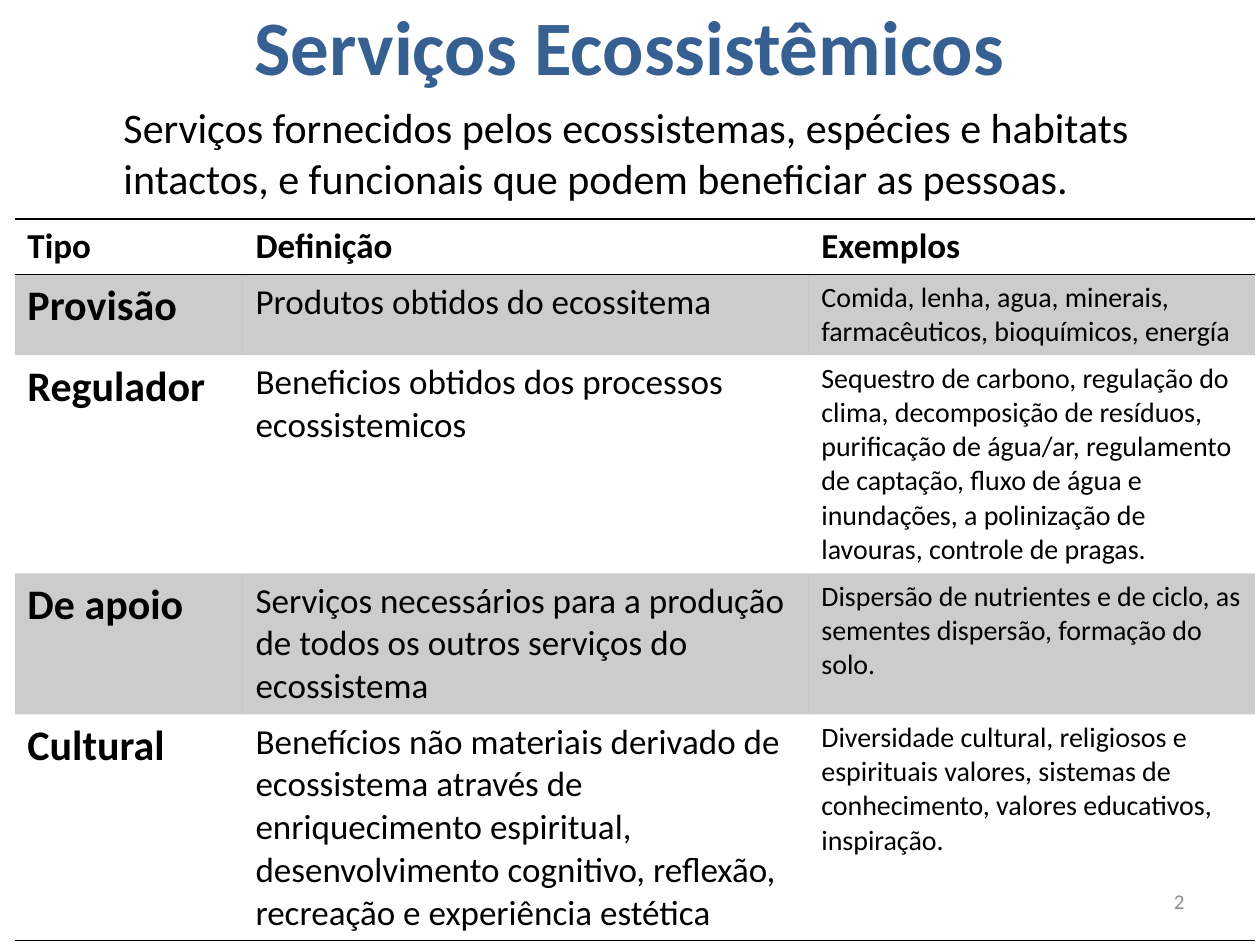
import pptx
import pptx.dml.color
import pptx.enum.text
import pptx.oxml
import pptx.oxml.ns
import pptx.util
from pptx.util import Cm

FONT = "Calibri"
COLORS = {"title": "376092", "text": "000000", "number": "8C8C8C", "band": "000000", "rule": "000000"}
BAND_OPACITY = 20
PLAIN_TABLE_STYLE = "{2D5ABB26-0587-4C30-8999-92F81FD0307C}"
ALIGN = pptx.enum.text.PP_ALIGN
ANCHOR = pptx.enum.text.MSO_ANCHOR

COLUMN_SHARES = [1.81, 4.49, 3.54]
ROW_HEIGHTS = [1.12, 1.63, 4.4, 2.84, 4.56]
HEADER = ["Tipo", "Definição", "Exemplos"]
SERVICES = [
    ["Provisão", "Produtos obtidos do ecossitema",
     "Comida, lenha, agua, minerais, farmacêuticos, bioquímicos, energía"],
    ["Regulador", "Beneficios obtidos dos processos ecossistemicos",
     "Sequestro de carbono, regulação do clima, decomposição de resíduos, purificação de água/ar, "
     "regulamento de captação, fluxo de água e inundações, a polinização de lavouras, "
     "controle de pragas."],
    ["De apoio", "Serviços necessários para a produção de todos os outros serviços do ecossistema",
     "Dispersão de nutrientes e de ciclo, as sementes dispersão, formação do solo."],
    ["Cultural", "Benefícios não materiais derivado de ecossistema através de enriquecimento espiritual, "
     "desenvolvimento cognitivo, reflexão, recreação e experiência estética",
     "Diversidade cultural, religiosos e espirituais valores, sistemas de conhecimento, "
     "valores educativos, inspiração."],
]


def write(text_frame, text, size, color="text", bold=False, align=ALIGN.LEFT):
    paragraph = text_frame.paragraphs[0]
    paragraph.alignment = align
    run = paragraph.add_run()
    run.text = text
    run.font.name = FONT
    run.font.size = pptx.util.Pt(size)
    run.font.bold = bold
    run.font.color.rgb = pptx.dml.color.RGBColor.from_string(COLORS[color])


def add_title(slide, left, top, width, height):
    title = slide.shapes.title
    title.left, title.top, title.width, title.height = left, top, width, height
    title.text_frame.vertical_anchor = ANCHOR.MIDDLE
    write(title.text_frame, "Serviços Ecossistêmicos", 44, "title", True, ALIGN.CENTER)


def add_text(slide, left, top, width, height, text, size, anchor=ANCHOR.TOP, **style):
    text_frame = slide.shapes.add_textbox(left, top, width, height).text_frame
    text_frame.word_wrap = True
    text_frame.vertical_anchor = anchor
    write(text_frame, text, size, **style)


def format_cell(cell, banded, ruled_edges):
    """Fill the cell if banded and draw a rule on each edge named in ruled_edges (T, B)."""
    if banded:
        cell.fill.solid()
        cell.fill.fore_color.rgb = pptx.dml.color.RGBColor.from_string(COLORS["band"])
    else:
        cell.fill.background()
    properties = cell._tc.get_or_add_tcPr()
    namespace = pptx.oxml.ns.nsdecls("a")
    if banded:
        color = properties.find(".//" + pptx.oxml.ns.qn("a:srgbClr"))
        color.append(pptx.oxml.parse_xml(f'<a:alpha {namespace} val="{BAND_OPACITY * 1000}"/>'))
    for position, edge in enumerate(ruled_edges):
        properties.insert(position, pptx.oxml.parse_xml(
            f'<a:ln{edge} {namespace} w="12700"><a:solidFill>'
            f'<a:srgbClr val="{COLORS["rule"]}"/></a:solidFill></a:ln{edge}>'))


def add_services_table(slide, left, top, width, height):
    rows = [HEADER] + SERVICES
    frame = slide.shapes.add_table(len(rows), len(HEADER), left, top, width, height)
    table = frame.table
    frame.element.find(".//" + pptx.oxml.ns.qn("a:tableStyleId")).text = PLAIN_TABLE_STYLE
    for column, share in zip(table.columns, COLUMN_SHARES):
        column.width = int(width * share / sum(COLUMN_SHARES))
    for row, share in zip(table.rows, ROW_HEIGHTS):
        row.height = int(height * share / sum(ROW_HEIGHTS))

    edges = {0: "TB", len(rows) - 1: "B"}
    for row_index, texts in enumerate(rows):
        is_header = row_index == 0
        sizes = [20, 20, 20] if is_header else [24, 20, 16]
        for column_index, text in enumerate(texts):
            cell = table.cell(row_index, column_index)
            format_cell(cell, row_index % 2 == 1, edges.get(row_index, ""))
            write(cell.text_frame, text, sizes[column_index],
                  bold=is_header or column_index == 0)


def main():
    presentation = pptx.Presentation()
    presentation.slide_width, presentation.slide_height = Cm(25.4), Cm(19.05)
    slide = presentation.slides.add_slide(presentation.slide_layouts.get_by_name("Title Only"))
    add_title(slide, Cm(1.27), Cm(-0.69), Cm(22.86), Cm(3.18))
    add_text(slide, Cm(2.24), Cm(1.93), Cm(22.86), Cm(3.4),
             "Serviços fornecidos pelos ecossistemas, espécies e habitats intactos, "
             "e funcionais que podem beneficiar as pessoas.", 24)
    add_text(slide, Cm(18.2), Cm(17.66), Cm(5.93), Cm(1.01), "2", 12, ANCHOR.MIDDLE,
             color="number", align=ALIGN.RIGHT)
    add_services_table(slide, Cm(0.3), Cm(4.41), Cm(25), Cm(sum(ROW_HEIGHTS)))
    presentation.save("out.pptx")


if __name__ == "__main__":
    main()
